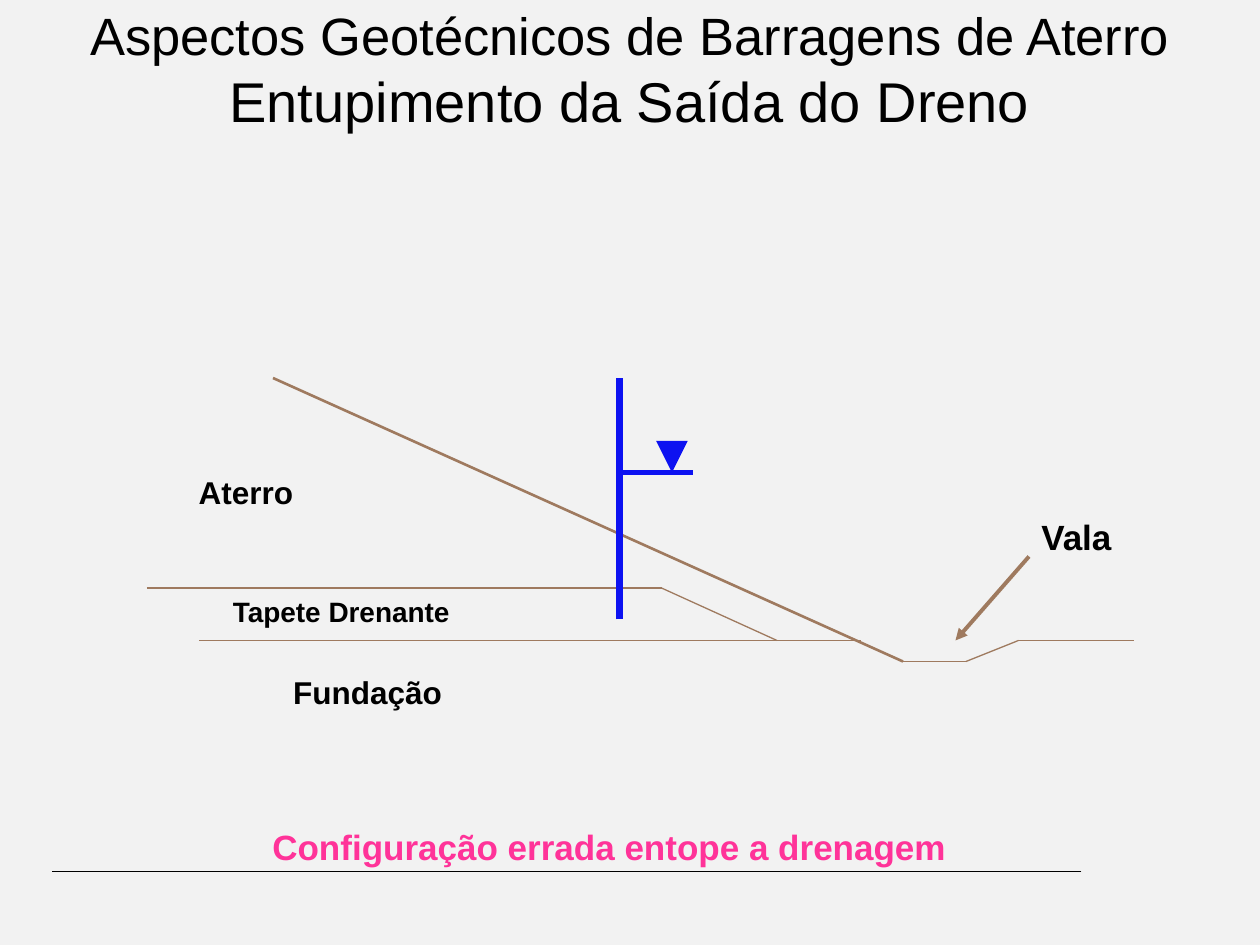
from lxml.etree import SubElement
from pptx import Presentation
from pptx.dml.color import RGBColor
from pptx.enum.shapes import MSO_CONNECTOR
from pptx.enum.text import MSO_ANCHOR, MSO_AUTO_SIZE, PP_ALIGN
from pptx.oxml.ns import qn
from pptx.util import Pt

FONT = "Arial"
BLACK, EARTH, WATER, PINK = "000000", "9F7A5F", "0D12F1", "FF3399"
GROUND, DRAIN_TOP, DITCH = 366, 336, 378  # levels of the cross-section


def color(hex_string):
    return RGBColor.from_string(hex_string)


def add_run(paragraph, text, size, hex_string=BLACK, bold=False):
    run = paragraph.add_run()
    run.text = text
    run.font.name = FONT
    run.font.size = Pt(size)
    run.font.bold = bold
    run.font.color.rgb = color(hex_string)


def add_title(slide, lines):
    title = slide.shapes.title
    title.left, title.top, title.width, title.height = Pt(0), Pt(0), Pt(720), Pt(78)
    frame = title.text_frame
    frame.word_wrap = True
    frame.auto_size = MSO_AUTO_SIZE.NONE
    frame.vertical_anchor = MSO_ANCHOR.MIDDLE
    paragraph = frame.paragraphs[0]
    paragraph.alignment = PP_ALIGN.CENTER
    for index, (text, size) in enumerate(lines):
        if index:
            paragraph.add_line_break()
        add_run(paragraph, text, size)


def add_label(slide, text, box, size, hex_string=BLACK, align=PP_ALIGN.LEFT, wrap=False):
    frame = slide.shapes.add_textbox(*map(Pt, box)).text_frame
    frame.word_wrap = wrap
    frame.auto_size = MSO_AUTO_SIZE.SHAPE_TO_FIT_TEXT
    paragraph = frame.paragraphs[0]
    paragraph.alignment = align
    add_run(paragraph, text, size, hex_string, bold=True)


def add_line(slide, start, end, hex_string=EARTH, width=0.75, arrow=False):
    connector = slide.shapes.add_connector(
        MSO_CONNECTOR.STRAIGHT, *map(Pt, (*start, *end)))
    connector.line.color.rgb = color(hex_string)
    connector.line.width = Pt(width)
    if arrow:
        SubElement(connector.line._get_or_add_ln(), qn("a:tailEnd"), type="triangle")
    SubElement(connector._element.spPr, qn("a:effectLst"))


def add_dam_section(slide):
    # Foundation, downstream slope and drainage blanket
    add_line(slide, (114, GROUND), (492, GROUND))
    add_line(slide, (516, DITCH), (156, 216), width=1.5)
    add_line(slide, (84, DRAIN_TOP), (378, DRAIN_TOP))
    add_line(slide, (378, DRAIN_TOP), (444, GROUND))
    # Ditch and the ground beyond it
    add_line(slide, (516, DITCH), (552, DITCH), width=1)
    add_line(slide, (552, DITCH), (582, GROUND))
    add_line(slide, (582, GROUND), (648, GROUND))
    add_line(slide, (588, 318), (546, GROUND), width=2.25, arrow=True)


def add_piezometer(slide):
    add_line(slide, (354, 354), (354, 216), WATER, 4.5)
    add_line(slide, (354, 270), (396, 270), WATER, 3)
    add_line(slide, (384, 258), (384, 270), WATER, 6, arrow=True)


def main():
    presentation = Presentation()
    presentation.slide_width, presentation.slide_height = Pt(720), Pt(540)
    slide = presentation.slides.add_slide(presentation.slide_layouts[5])
    slide.background.fill.solid()
    slide.background.fill.fore_color.rgb = color("F2F2F2")

    # Footer rule
    add_line(slide, (618, 498), (30, 498), BLACK)

    add_dam_section(slide)
    add_piezometer(slide)

    # Labels and conclusion
    add_label(slide, "Aterro", (106.5, 267, 69, 36), 18)
    add_label(slide, "Fundação", (160.5, 381, 100, 36), 18)
    add_label(slide, "Tapete Drenante", (126, 336, 139.5, 26.5), 16)
    add_label(slide, "Vala", (588, 291, 102, 31), 20, wrap=True)
    add_label(slide, "Configuração errada entope a drenagem",
              (147, 468, 402.5, 31.5), 20, PINK, PP_ALIGN.CENTER)

    add_title(slide, [("Aspectos Geotécnicos de Barragens de Aterro", 30),
                      ("Entupimento da Saída do Dreno", 32)])
    presentation.save("out.pptx")


if __name__ == "__main__":
    main()
